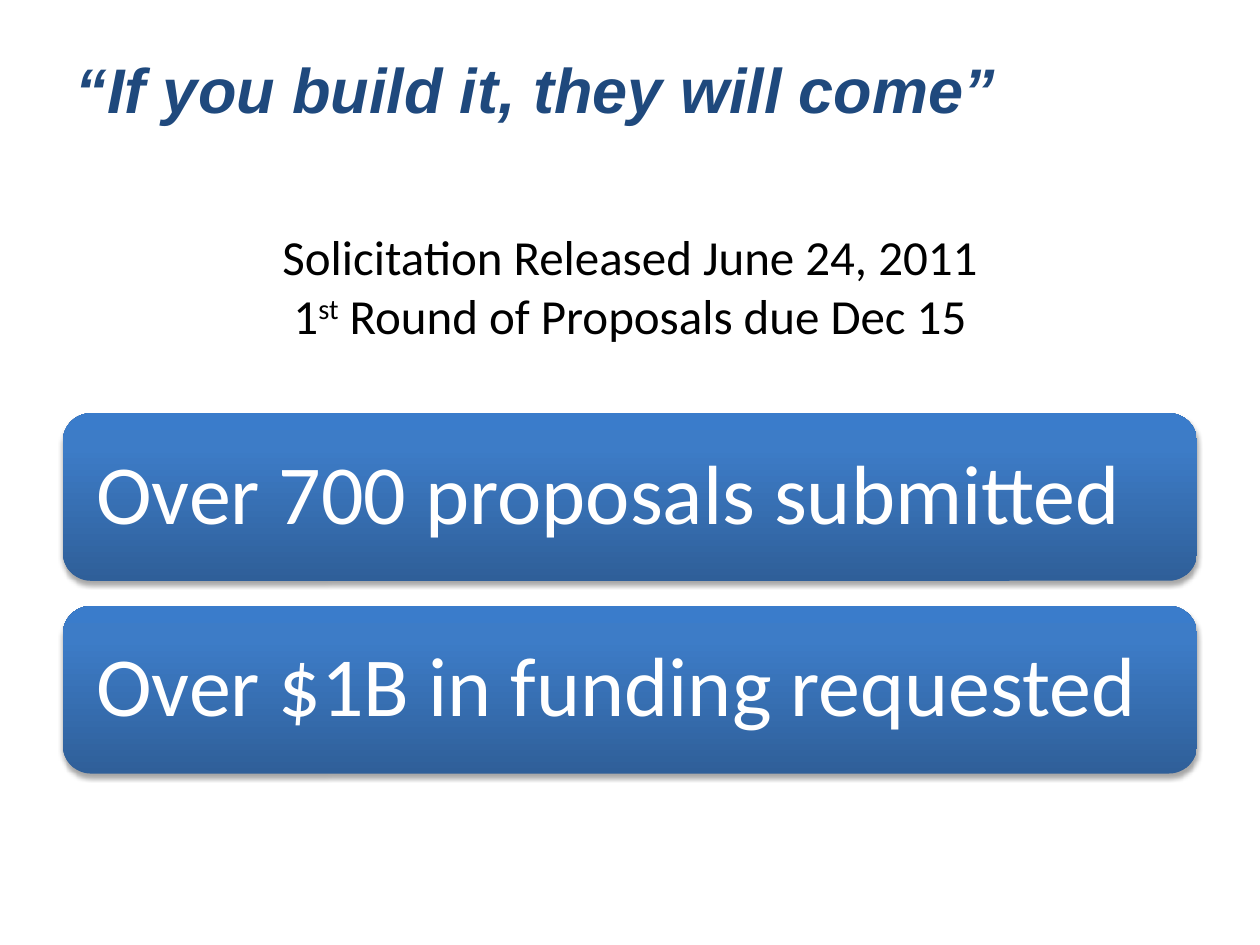
from copy import deepcopy

from lxml import etree
from pptx import Presentation
from pptx.dml.color import RGBColor
from pptx.enum import shapes, text
from pptx.oxml.ns import qn
from pptx.util import Inches, Pt

NAVY = RGBColor(0x1F, 0x49, 0x7D)
BLACK = RGBColor(0, 0, 0)
WHITE = RGBColor(255, 255, 255)
GRADIENT = [
    (0, RGBColor(0x2F, 0x5F, 0x99)),
    (0.8, RGBColor(0x3D, 0x7C, 0xC7)),
    (1, RGBColor(0x3A, 0x7C, 0xCB)),
]

TITLE = "“If you build it, they will come”"
DATES = [
    [("Solicitation Released June 24, 2011", False)],
    [("1", False), ("st", True), (" Round of Proposals due Dec 15", False)],
]
RESULTS = ["Over 700 proposals submitted", "Over $1B in funding requested"]

WIDTH, HEIGHT = 10, 7.5
MARGIN = WIDTH * 0.05
CONTENT_WIDTH = WIDTH - 2 * MARGIN
BAR_TOP, BAR_HEIGHT, BAR_PITCH = 3.28, 1.33, 1.53


def box(left, top, width, height):
    return [Inches(n) for n in (left, top, width, height)]


def style(p, name, size, color):
    p.font.name = name
    p.font.size = Pt(size)
    p.font.color.rgb = color


def fill_gradient(sp):
    sp.fill.gradient()
    stops = sp._element.spPr.find(".//" + qn("a:gsLst"))
    stops.append(deepcopy(stops[-1]))
    for stop, (position, color) in zip(sp.fill.gradient_stops, GRADIENT):
        stop.position = position
        stop.color.rgb = color
    sp.fill.gradient_angle = 90


def add_shadow(sp):
    sp.shadow.inherit = False
    effects = sp._element.spPr.find(qn("a:effectLst"))
    shadow = etree.SubElement(
        effects, qn("a:outerShdw"), blurRad=str(Pt(3.1)), dist=str(Pt(1.8)),
        dir="5400000", rotWithShape="0")
    color = etree.SubElement(shadow, qn("a:srgbClr"), val="000000")
    etree.SubElement(color, qn("a:alpha"), val="35000")


def add_title(slide):
    sp = slide.shapes.title
    sp.left, sp.top, sp.width, sp.height = box(MARGIN, 0.08, CONTENT_WIDTH, 1.25)
    tf = sp.text_frame
    tf.text = TITLE
    tf.vertical_anchor = text.MSO_ANCHOR.MIDDLE
    p = tf.paragraphs[0]
    p.alignment = text.PP_ALIGN.LEFT
    style(p, "Arial", 36, NAVY)
    p.font.bold = p.font.italic = True


def add_dates(slide):
    width = 7.67
    sp = slide.shapes.add_textbox(*box((WIDTH - width) / 2, 1.75, width, 1.04))
    tf = sp.text_frame
    tf.word_wrap = True
    for i, runs in enumerate(DATES):
        p = tf.add_paragraph() if i else tf.paragraphs[0]
        p.alignment = text.PP_ALIGN.CENTER
        style(p, "Calibri", 28, BLACK)
        for words, raised in runs:
            r = p.add_run()
            r.text = words
            if raised:
                r.font._element.set("baseline", "30000")


def add_result(slide, row, words):
    sp = slide.shapes.add_shape(
        shapes.MSO_SHAPE.ROUNDED_RECTANGLE,
        *box(MARGIN, BAR_TOP + row * BAR_PITCH, CONTENT_WIDTH, BAR_HEIGHT))
    fill_gradient(sp)
    sp.line.fill.background()
    add_shadow(sp)
    tf = sp.text_frame
    tf.word_wrap = True
    tf.vertical_anchor = text.MSO_ANCHOR.MIDDLE
    tf.margin_left = tf.margin_right = Inches(0.2)
    tf.text = words
    p = tf.paragraphs[0]
    p.alignment = text.PP_ALIGN.LEFT
    p.line_spacing = 0.9
    style(p, "Calibri", 48, WHITE)


def main():
    prs = Presentation()
    prs.slide_width, prs.slide_height = Inches(WIDTH), Inches(HEIGHT)
    slide = prs.slides.add_slide(prs.slide_layouts.get_by_name("Title Only"))
    add_title(slide)
    for row, words in enumerate(RESULTS):
        add_result(slide, row, words)
    add_dates(slide)
    prs.save("out.pptx")


if __name__ == "__main__":
    main()
